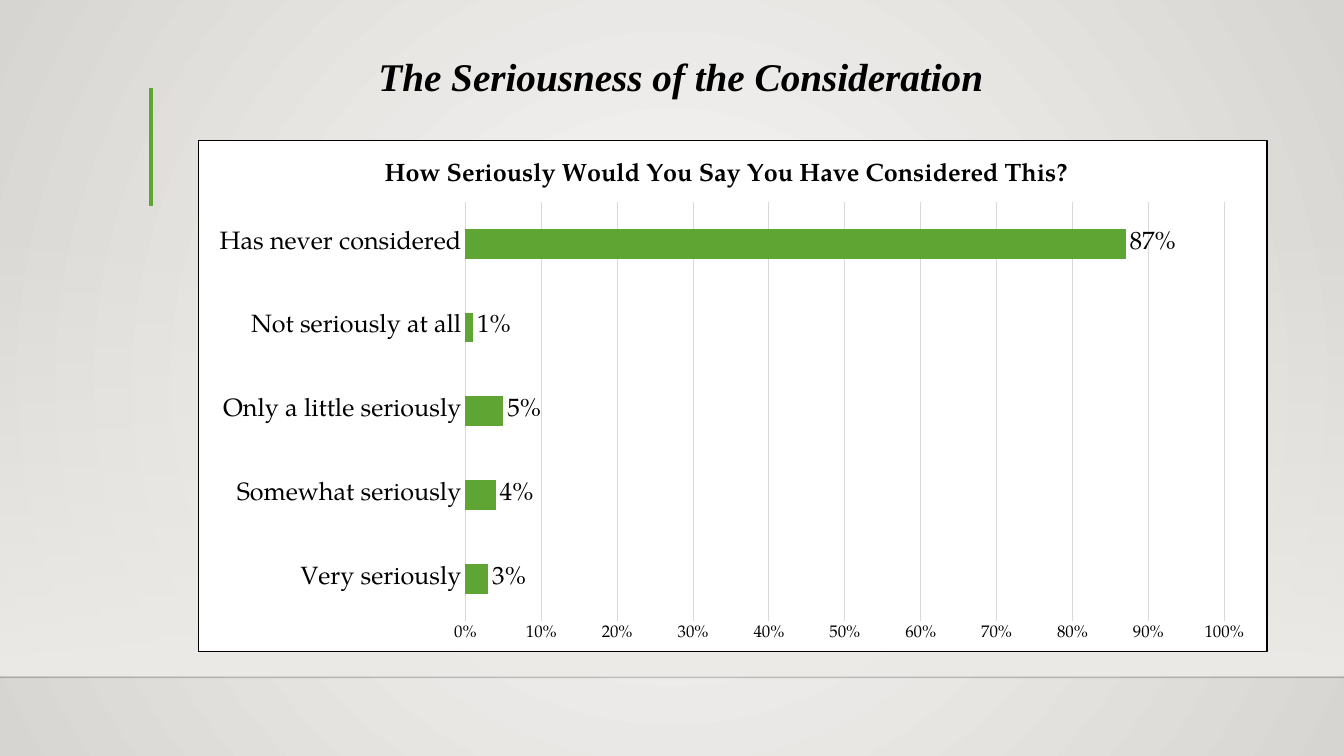
from lxml import etree
from pptx import Presentation
from pptx.chart.data import CategoryChartData
from pptx.dml.color import RGBColor
from pptx.enum import chart as charts, shapes, text
from pptx.oxml import parse_xml
from pptx.oxml.ns import nsdecls, qn
from pptx.util import Cm, Pt

# Content
HEADING = "The Seriousness of the Consideration"
QUESTION = "How Seriously Would You Say You Have Considered This?"
ANSWERS = [  # from the bottom bar to the top one
    ("Very seriously", 0.03),
    ("Somewhat seriously", 0.04),
    ("Only a little seriously", 0.05),
    ("Not seriously at all", 0.01),
    ("Has never considered", 0.87),
]
COLORS = {"ink": "000000", "green": "5FA534", "grid": "D9D9D9", "floor": "EDEBE7",
          "edge": "000001", "light": "FAFAF9", "dark": "D7D5D2", "panel": "FFFFFF"}
HEADING_FONT, CHART_FONT = "Times New Roman", "TeX Gyre Pagella"
WIDTH, HEIGHT = Cm(33.87), Cm(19.05)
RADIAL = ('<a:path path="circle"><a:fillToRect l="50000" t="50000" '
          'r="50000" b="50000"/></a:path>')
DOWNWARD = '<a:lin ang="5400000" scaled="0"/>'


def color(name):
    return RGBColor.from_string(COLORS[name])


def style_font(font, size, bold=False, face=CHART_FONT):
    font.name, font.size, font.bold = face, Pt(size), bold
    font.color.rgb = color("ink")


def style_line(line, name, width):
    line.color.rgb = color(name)
    line.width = Pt(width)


def set_gradient(properties, stops, direction):
    """Swap a solid fill for a gradient of (position, colour, opacity) stops."""
    marks = "".join(
        f'<a:gs pos="{pos * 1000}"><a:srgbClr val="{COLORS[name]}">'
        f'<a:alpha val="{opacity * 1000}"/></a:srgbClr></a:gs>'
        for pos, name, opacity in stops)
    gradient = parse_xml(f'<a:gradFill {nsdecls("a")} rotWithShape="1">'
                         f'<a:gsLst>{marks}</a:gsLst>{direction}</a:gradFill>')
    solid = properties.find(qn("a:solidFill"))
    properties.replace(solid, gradient)


def add_rule(slide, x1, y1, x2, y2, name, width):
    rule = slide.shapes.add_connector(shapes.MSO_CONNECTOR.STRAIGHT, x1, y1, x2, y2)
    style_line(rule.line, name, width)
    etree.SubElement(rule._element.spPr, qn("a:effectLst"))
    return rule


def set_layout(parent, before, inner, **box):
    """Place a chart part by fractions of the chart's frame."""
    for old in parent.findall(qn("c:layout")):
        parent.remove(old)
    target = '<c:layoutTarget val="inner"/>' if inner else ""
    modes = "".join(f'<c:{side}Mode val="edge"/>' for side in "xy")
    values = "".join(f'<c:{key} val="{value}"/>' for key, value in box.items())
    layout = parse_xml(f'<c:layout {nsdecls("c")}><c:manualLayout>{target}{modes}'
                       f'{values}</c:manualLayout></c:layout>')
    parent.find(qn(before)).addprevious(layout)


prs = Presentation()
prs.slide_width, prs.slide_height = WIDTH, HEIGHT
slide = prs.slides.add_slide(prs.slide_layouts[5])

# Backdrop
slide.background.fill.solid()
set_gradient(slide.element.find(".//" + qn("p:bgPr")),
             [(0, "light", 100), (100, "dark", 100)], RADIAL)
wall = slide.shapes.add_shape(shapes.MSO_SHAPE.RECTANGLE, 0, Cm(5.59), WIDTH, Cm(11.43))
wall.shadow.inherit = False
wall.line.fill.background()
wall.fill.solid()
set_gradient(wall._element.spPr, [(0, "floor", 0), (100, "floor", 100)], DOWNWARD)

# Floor edge and accent rule
floor_edge = add_rule(slide, 0, Cm(17.07), WIDTH, Cm(17.07), "edge", 1)
edge_color = floor_edge._element.spPr.find(".//" + qn("a:srgbClr"))
etree.SubElement(edge_color, qn("a:alpha"), val="20000")
add_rule(slide, Cm(3.81), Cm(2.21), Cm(3.81), Cm(5.18), "green", 3)

# Heading
heading = slide.shapes.title
heading.left, heading.top, heading.width, heading.height = (
    Cm(2.36), Cm(1.02), Cm(29.59), Cm(1.63))
heading.text_frame.text = HEADING
heading.text_frame.vertical_anchor = text.MSO_ANCHOR.BOTTOM
heading_line = heading.text_frame.paragraphs[0]
heading_line.alignment = text.PP_ALIGN.CENTER
heading_line.line_spacing = 0.9
style_font(heading_line.font, 28, True, HEADING_FONT)
heading_line.font.italic = True

# Chart
answers = CategoryChartData(number_format="0%")
answers.categories = [answer for answer, _ in ANSWERS]
answers.add_series("Series 1", [share for _, share in ANSWERS])
chart = slide.shapes.add_chart(charts.XL_CHART_TYPE.BAR_CLUSTERED, Cm(4.98), Cm(3.53),
                               Cm(26.97), Cm(12.9), answers).chart
style_font(chart.font, 10)
chart.has_legend = False
chart.has_title = True
chart.chart_title.text_frame.text = QUESTION
style_font(chart.chart_title.text_frame.paragraphs[0].font, 18, True)
set_layout(chart.chart_title._element, "c:overlay", False, x=0.17, y=0.03)
set_layout(chart._chartSpace.chart.plotArea, "c:barChart", True,
           x=0.25, y=0.12, w=0.71, h=0.82)
panel = parse_xml(
    f'<c:spPr {nsdecls("c", "a")}><a:solidFill><a:srgbClr val="{COLORS["panel"]}"/>'
    f'</a:solidFill><a:ln w="{Pt(1)}"><a:solidFill><a:srgbClr val="{COLORS["ink"]}"/>'
    '</a:solidFill></a:ln></c:spPr>')
chart._chartSpace.find(qn("c:txPr")).addprevious(panel)

# Bars and their labels
bars = chart.plots[0]
bars.gap_width = 182
bars.vary_by_categories = False
bars.series[0].format.fill.solid()
bars.series[0].format.fill.fore_color.rgb = color("green")
bars.has_data_labels = True
shares = bars.data_labels
shares.show_value = True
shares.number_format, shares.number_format_is_linked = "0%", False
shares.position = charts.XL_LABEL_POSITION.OUTSIDE_END
style_font(shares.font, 18)

# Axes
for axis, size in ((chart.category_axis, 18), (chart.value_axis, 12)):
    axis.major_tick_mark = axis.minor_tick_mark = charts.XL_TICK_MARK.NONE
    style_font(axis.tick_labels.font, size)
style_line(chart.category_axis.format.line, "grid", 0.75)
scale = chart.value_axis
scale.minimum_scale, scale.maximum_scale, scale.major_unit = 0, 1, 0.1
scale.tick_labels.number_format = "0%"
scale.tick_labels.number_format_is_linked = False
scale.format.line.fill.background()
scale.has_major_gridlines = True
style_line(scale.major_gridlines.format.line, "grid", 0.75)

prs.save("out.pptx")
